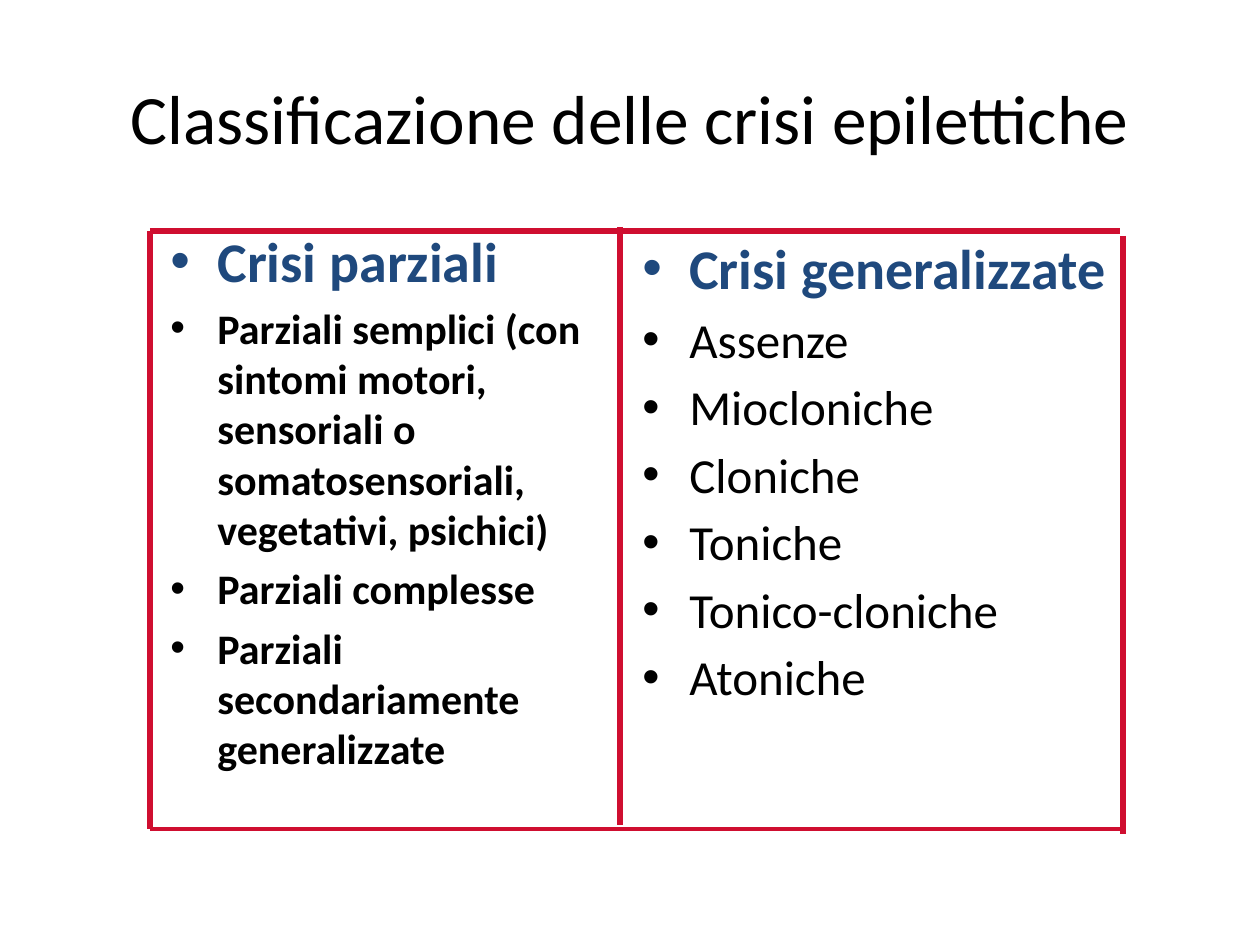
from lxml import etree
from pptx import Presentation, util as u
from pptx.dml.color import RGBColor
from pptx.enum import shapes, text
from pptx.oxml.ns import qn

PX = u.Inches(1) / 126
BLACK, BLUE, RED = "000000", "1F497D", "CF0E30"

TITLE = "Classificazione delle crisi epilettiche"
TITLE_AREA = (63, 38, 1134, 157)
COLUMNS = [
    dict(area=(158, 220, 462, 624), heading="Crisi parziali", size=24, bold=True,
         items=["Parziali semplici (con sintomi motori, sensoriali o somatosensoriali, "
                "vegetativi, psichici)",
                "Parziali complesse",
                "Parziali secondariamente generalizzate"]),
    dict(area=(630, 227, 557, 624), heading="Crisi generalizzate", size=28, bold=False,
         items=["Assenze", "Miocloniche", "Cloniche", "Toniche", "Tonico-cloniche",
                "Atoniche"]),
]
FRAME_LINES = [  # x1, y1, x2, y2, width in points
    (150, 231, 1120, 231, 3),
    (150, 231, 150, 829, 3),
    (150, 829, 1120, 829, 2.25),
    (1123, 236, 1123, 834, 3),
    (620, 227, 620, 825, 3),
]


def px(*values):
    return [round(value * PX) for value in values]


def color(value):
    return RGBColor.from_string(value)


def add_frame(page, area, anchor):
    frame = page.shapes.add_textbox(*px(*area)).text_frame
    frame.word_wrap = True
    frame.vertical_anchor = anchor
    return frame


def write(para, words, size, fill=BLACK, bold=False):
    span = para.add_run()
    span.text = words
    span.font.name = "Calibri"
    span.font.size = u.Pt(size)
    span.font.bold = bold
    span.font.color.rgb = color(fill)


def make_bullet(para):
    para.space_before = u.Pt(5)
    props = para._p.get_or_add_pPr()
    indent = px(47)[0]
    props.set("marL", str(indent))
    props.set("indent", str(-indent))
    etree.SubElement(props, qn("a:buFont")).set("typeface", "Arial")
    etree.SubElement(props, qn("a:buChar")).set("char", "•")


def add_column(page, area, heading, size, bold, items):
    frame = add_frame(page, area, text.MSO_ANCHOR.TOP)
    para = frame.paragraphs[0]
    make_bullet(para)
    write(para, heading, 32, fill=BLUE, bold=True)
    for item in items:
        para = frame.add_paragraph()
        make_bullet(para)
        write(para, item, size, bold=bold)


def add_line(page, x1, y1, x2, y2, width):
    line = page.shapes.add_connector(shapes.MSO_CONNECTOR.STRAIGHT, *px(x1, y1, x2, y2))
    line.line.color.rgb = color(RED)
    line.line.width = u.Pt(width)
    etree.SubElement(line._element.spPr, qn("a:effectLst"))


def main():
    deck = Presentation()
    deck.slide_width, deck.slide_height = px(1260, 945)
    page = deck.slides.add_slide(deck.slide_layouts[6])

    title = add_frame(page, TITLE_AREA, text.MSO_ANCHOR.MIDDLE).paragraphs[0]
    title.alignment = text.PP_ALIGN.CENTER
    write(title, TITLE, 39.6)
    for column in COLUMNS:
        add_column(page, **column)
    for line in FRAME_LINES:
        add_line(page, *line)
    deck.save("out.pptx")


if __name__ == "__main__":
    main()
